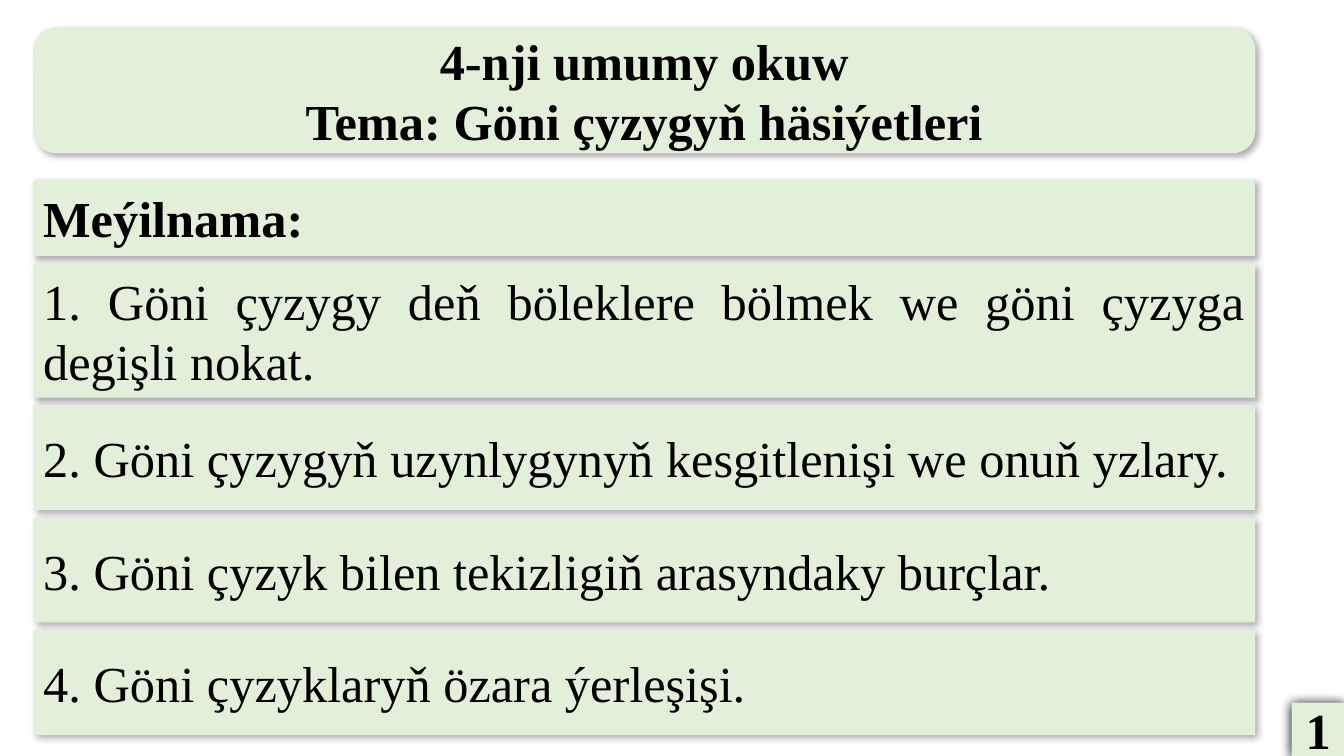
from lxml import etree
from pptx import Presentation
from pptx.dml.color import RGBColor
from pptx.enum.shapes import MSO_SHAPE as Shape
from pptx.enum.text import MSO_ANCHOR as Anchor, PP_ALIGN as Align
from pptx.oxml.ns import qn
from pptx.util import Inches, Pt

COLORS = {"panel": "E2F0D9", "text": "000000", "shade": "000000"}
FONT = "Times New Roman"

# Shadows: opacity in percent, blur and distance in points, angle in degrees
SOFT = (30, 4.5, 2.6, 53)
DARK = (100, 8.5, 1, 90)

HEAD = "Meýilnama:"
PLAN = [  # text, row height
    ("1. Göni çyzygy deň böleklere bölmek we göni çyzyga degişli nokat.", 1.33),
    ("2. Göni çyzygyň uzynlygynyň kesgitlenişi we onuň yzlary.", 1.04),
    ("3. Göni çyzyk bilen tekizligiň arasyndaky burçlar.", 1.04),
    ("4. Göni çyzyklaryň özara ýerleşişi.", 1.04),
]


def add_shade(shape, shade):
    alpha, blur, dist, angle = shade
    shape.shadow.inherit = False
    effects = shape._element.spPr.find(qn("a:effectLst"))
    outer = etree.SubElement(
        effects, qn("a:outerShdw"), blurRad=str(Pt(blur)), dist=str(Pt(dist)),
        dir=str(angle * 60000), algn="ctr", rotWithShape="0")
    color = etree.SubElement(outer, qn("a:srgbClr"), val=COLORS["shade"])
    etree.SubElement(color, qn("a:alpha"), val=str(alpha * 1000))


def add_panel(slide, box, lines, align, bold=False, kind=Shape.RECTANGLE, shade=SOFT):
    shape = slide.shapes.add_shape(kind, *map(Inches, box))
    shape.fill.solid()
    shape.fill.fore_color.rgb = RGBColor.from_string(COLORS["panel"])
    shape.line.fill.background()
    add_shade(shape, shade)
    frame = shape.text_frame
    frame.word_wrap = True
    frame.vertical_anchor = Anchor.MIDDLE
    for i, line in enumerate(lines):
        para = frame.add_paragraph() if i else frame.paragraphs[0]
        para.text = line
        para.alignment = align
        font = para.font
        font.name, font.size, font.bold = FONT, Pt(36), bold
        font.color.rgb = RGBColor.from_string(COLORS["text"])
    return shape


# Title banner
def add_title(slide, box):
    lines = ["4-nji umumy okuw", "Tema: Göni çyzygyň häsiýetleri"]
    banner = add_panel(slide, box, lines, Align.CENTER, True, Shape.ROUNDED_RECTANGLE)
    banner.adjustments[0] = 0.18


# Heading and plan rows, spread evenly over the box
def add_plan(slide, box):
    left, top, width, height = box
    rows = [(HEAD, 0.76, Align.LEFT, True)]
    rows += [(text, tall, Align.JUSTIFY, False) for text, tall in PLAN]
    gap = (height - sum(row[1] for row in rows)) / (len(rows) - 1)
    for text, tall, align, bold in rows:
        add_panel(slide, (left, top, width, tall), [text], align, bold)
        top += tall + gap


# Page number
def add_number(slide, box):
    add_panel(slide, box, ["1"], Align.CENTER, True, shade=DARK)


def main():
    deck = Presentation()
    deck.slide_width, deck.slide_height = Inches(13.33), Inches(7.5)
    slide = deck.slides.add_slide(deck.slide_layouts[6])
    add_title(slide, (0.33, 0.27, 12.12, 1.25))
    add_plan(slide, (0.33, 1.78, 12.12, 5.51))
    add_number(slide, (12.81, 6.97, 0.53, 0.53))
    deck.save("out.pptx")


if __name__ == "__main__":
    main()
